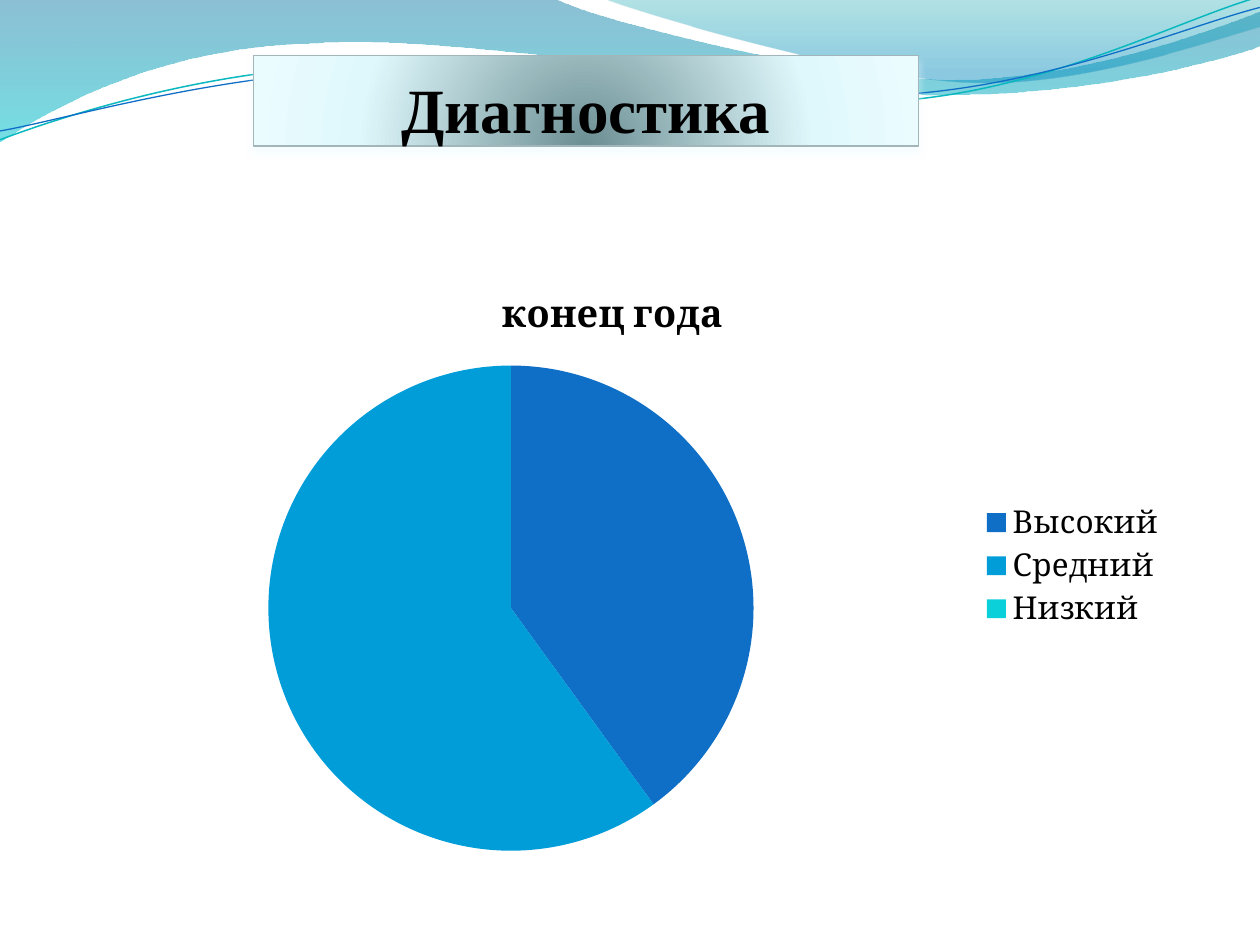
from math import cos, radians, sin

from lxml import etree
from pptx import Presentation
from pptx.chart.data import CategoryChartData
from pptx.dml.color import RGBColor
from pptx.enum.chart import XL_CHART_TYPE, XL_LEGEND_POSITION
from pptx.enum.text import MSO_ANCHOR, PP_ALIGN
from pptx.oxml.ns import qn
from pptx.util import Cm, Pt

PIE = XL_CHART_TYPE.PIE
RIGHT = XL_LEGEND_POSITION.RIGHT
BOTTOM = MSO_ANCHOR.BOTTOM
CENTER = PP_ALIGN.CENTER

TITLE_ONLY = 5
CM_PER_INCH = 2.54
CURVE_TILT = -2.7
COLORS = {
    "text": "000000",
    "teal_line": "0AB8BF",
    "blue": "0F6FC6",
    "sky": "009DD9",
    "cyan": "0BD0D9",
    "title_edge": "A2B5B9",
    "title_shadow": "EBFCFF",
}
# Gradient stops: position %, colour, opacity %
WAVE_STOPS = [(0, "0074A1", 45), (100, "00C6CF", 55)]
CORNER_STOPS = [(0, "00A1A9", 30), (80, "008BBF", 45)]
TITLE_STOPS = [(0, "6C8F94", 100), (68, "DFF8FC", 100), (100, "EBFCFF", 100)]

# Outlines in inches: one point is a line end, three points are a Bezier segment
WAVE = [
    [(0, 0)], [(4.4, -0.01)],
    [(4.76, 0.17), (6.64, 0.63), (7.58, 0.63)],
    [(8.53, 0.63), (9.58, 0.26), (10, 0.09)],
    [(10.01, 0.36)],
    [(9.83, 0.44), (8.7, 0.76), (7.46, 0.75)],
    [(6.22, 0.75), (3.82, 0.28), (2.57, 0.34)],
    [(1.29, 0.36), (0.46, 0.83), (-0.01, 1.13)],
    [(0, 0)],
]
CORNER = [
    [(4.79, -0.01)],
    [(5.09, 0.11), (6.82, 0.62), (7.69, 0.65)],
    [(8.56, 0.69), (9.61, 0.32), (10, 0.21)],
    [(10, 0)], [(4.79, -0.01)],
]
TEAL_CURVE = [
    [(0, 1.11)],
    [(0.48, 0.93), (1.58, 0.57), (2.77, 0.52)],
    [(3.95, 0.47), (5.93, 0.89), (7.13, 0.8)],
    [(8.33, 0.71), (9.38, 0.15), (9.98, -0.02)],
]
BLUE_CURVE = [
    [(0, 1.04)],
    [(0.47, 0.96), (1.64, 0.61), (2.83, 0.56)],
    [(4.03, 0.51), (5.97, 0.84), (7.17, 0.75)],
    [(8.36, 0.67), (9.41, 0.21), (10, 0.06)],
]


def inches(value):
    return Cm(value * CM_PER_INCH)


def rgb(name):
    return RGBColor.from_string(COLORS[name])


def format_font(font, size, name, color="text", bold=False):
    font.size = Pt(size)
    font.name = name
    font.bold = bold
    font.color.rgb = rgb(color)


def write_text(frame, text, align=CENTER, **font_format):
    paragraph = frame.paragraphs[0]
    paragraph.alignment = align
    run = paragraph.add_run()
    run.text = text
    format_font(run.font, **font_format)


def add_node(parent, tag, **attributes):
    values = {key: str(value) for key, value in attributes.items()}
    return etree.SubElement(parent, qn(tag), values)


def add_color(parent, color, opacity):
    node = add_node(parent, "a:srgbClr", val=color)
    add_node(node, "a:alpha", val=opacity * 1000)


def fill_gradient(shape, stops, focus=None):
    """Fill from top to bottom, or as a circle around the focus rectangle."""
    shape.fill.gradient()
    gradient = shape._element.spPr.find(qn("a:gradFill"))
    for child in list(gradient):
        gradient.remove(child)
    stop_list = add_node(gradient, "a:gsLst")
    for position, color, opacity in stops:
        add_color(add_node(stop_list, "a:gs", pos=position * 1000), color, opacity)
    if focus:
        circle = add_node(gradient, "a:path", path="circle")
        sides = {side: percent * 1000 for side, percent in zip("ltrb", focus)}
        add_node(circle, "a:fillToRect", **sides)
    else:
        add_node(gradient, "a:lin", ang=90 * 60000, scaled=1)


def turn(outline, degrees):
    """Rotate an outline clockwise around the middle of its ends."""
    (left, low), (right, high) = outline[0][0], outline[-1][-1]
    cx, cy = (left + right) / 2, (low + high) / 2
    c, s = cos(radians(degrees)), sin(radians(degrees))
    return [[(cx + (x - cx) * c - (y - cy) * s, cy + (x - cx) * s + (y - cy) * c)
             for x, y in segment] for segment in outline]


class SlideBuilder:
    title_font = "Times New Roman"
    chart_font = "Cambria"

    def __init__(self, slide):
        self.slide = slide

    def outline(self, outline, closed):
        start, *rest = [(inches(x), inches(y)) for seg in outline for x, y in seg]
        builder = self.slide.shapes.build_freeform(*start)
        builder.add_line_segments(rest, close=closed)
        shape = builder.convert_to_shape()
        shape.shadow.inherit = False
        # Join each three points of a Bezier segment into one curve
        lines = shape._element.spPr.iter(qn("a:lnTo"))
        lines = iter(list(lines))
        for segment in outline[1:]:
            ends = [next(lines) for _ in segment]
            if len(ends) == 3:
                bezier = etree.Element(qn("a:cubicBezTo"))
                ends[0].addprevious(bezier)
                for end in ends:
                    bezier.append(end[0])
                    end.getparent().remove(end)
        return shape

    def wave(self, outline, stops):
        shape = self.outline(outline, closed=True)
        fill_gradient(shape, stops)
        shape.line.fill.background()

    def curve(self, outline, color, width):
        shape = self.outline(turn(outline, -CURVE_TILT), closed=False)
        shape.rotation = CURVE_TILT
        shape.fill.background()
        shape.line.color.rgb = rgb(color)
        shape.line.width = Pt(width)

    def title(self, text, left, top, width, height):
        title = self.slide.shapes.title
        title.left, title.top = inches(left), inches(top)
        title.width, title.height = inches(width), inches(height)
        fill_gradient(title, TITLE_STOPS, focus=(50, 130, 50, -30))
        title.line.color.rgb = rgb("title_edge")
        title.line.width = Pt(0.75)
        effects = add_node(title._element.spPr, "a:effectLst")
        shadow = add_node(effects, "a:outerShdw", blurRad=Pt(4.5), dist=Pt(3),
                          dir=90 * 60000, rotWithShape=0)
        add_color(shadow, COLORS["title_shadow"], 48)
        frame = title.text_frame
        frame.word_wrap = True
        frame.vertical_anchor = BOTTOM
        frame.margin_left = frame.margin_right = frame.margin_bottom = 0
        frame.margin_top = inches(0.05)
        write_text(frame, text, size=36, name=self.title_font, bold=True)
        # Bring the title in front of the waves
        self.slide.shapes._spTree.append(title._element)

    def pie(self, heading, levels, left, top, width, height):
        data = CategoryChartData()
        data.categories = [level for level, _, _ in levels]
        data.add_series(heading, [share for _, share, _ in levels])
        chart = self.slide.shapes.add_chart(
            PIE, inches(left), inches(top), inches(width), inches(height), data
        ).chart
        format_font(chart.font, size=18, name=self.chart_font)
        chart.has_title = True
        write_text(chart.chart_title.text_frame, heading, size=21.6,
                   name=self.chart_font, bold=True)
        chart.has_legend = True
        chart.legend.position = RIGHT
        chart.legend.include_in_layout = False
        format_font(chart.legend.font, size=18, name=self.chart_font)
        plot = chart.plots[0]
        plot.vary_by_categories = True
        for index, (_, _, color) in enumerate(levels):
            fill = plot.series[0].points[index].format.fill
            fill.solid()
            fill.fore_color.rgb = rgb(color)


def main():
    deck = Presentation()
    deck.slide_width, deck.slide_height = inches(10), inches(7.5)
    builder = SlideBuilder(deck.slides.add_slide(deck.slide_layouts[TITLE_ONLY]))

    # Decorative waves along the top edge
    builder.wave(WAVE, WAVE_STOPS)
    builder.wave(CORNER, CORNER_STOPS)
    builder.curve(TEAL_CURVE, "teal_line", 0.85)
    builder.curve(BLUE_CURVE, "blue", 0.75)

    # Title and year-end results
    builder.title("Диагностика", 2.01, 0.44, 5.28, 0.72)
    levels = [("Высокий", 40, "blue"), ("Средний", 60, "sky"), ("Низкий", 0, "cyan")]
    builder.pie("конец года", levels, 0.36, 2.09, 9, 4.8)

    deck.save("out.pptx")


if __name__ == "__main__":
    main()
